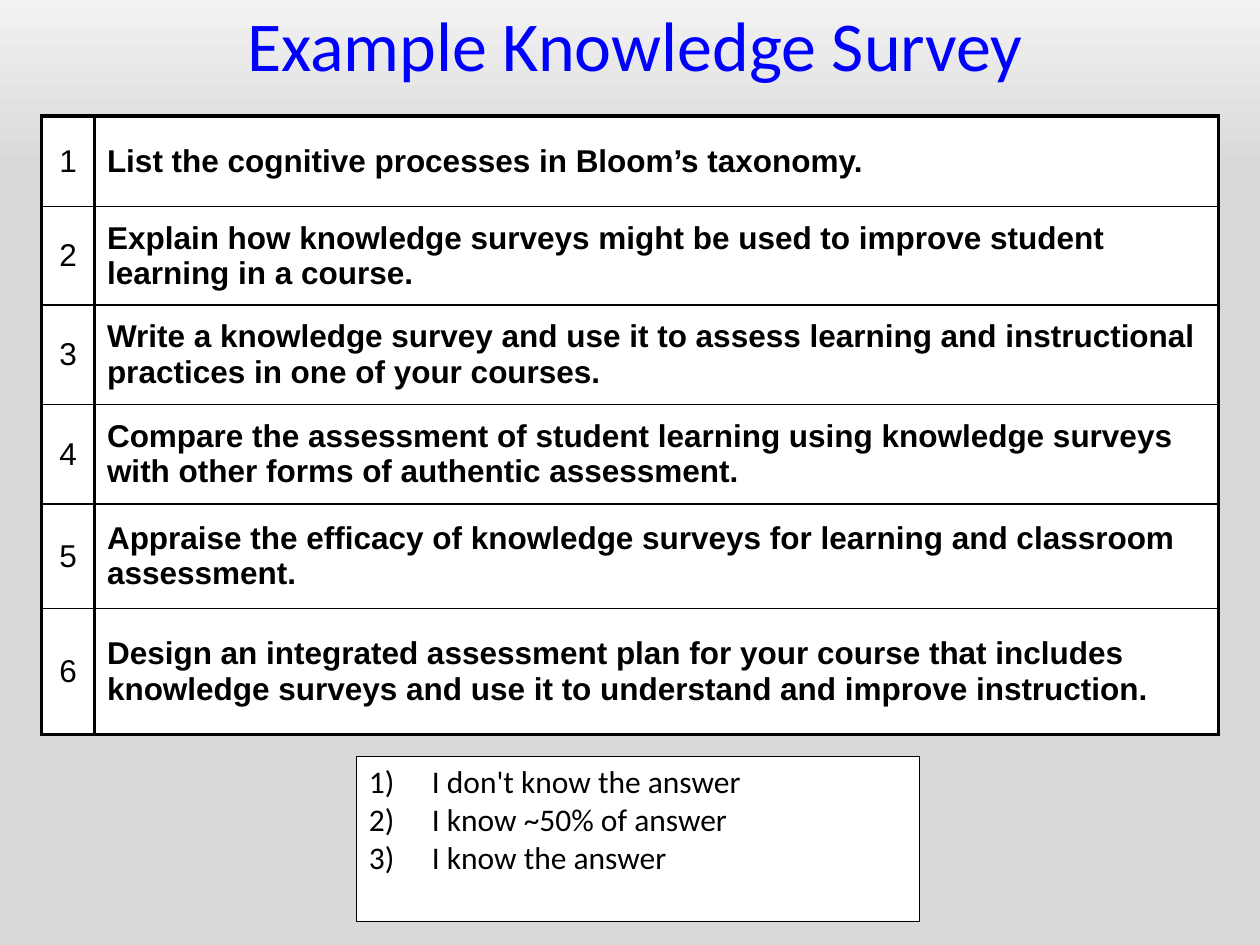
"""Build a one-slide example of a knowledge survey with its answer scale."""
from dataclasses import dataclass

from lxml.etree import SubElement
from pptx import Presentation
from pptx.dml.color import RGBColor
from pptx.enum.shapes import MSO_AUTO_SHAPE_TYPE as ShapeType
from pptx.enum.text import MSO_ANCHOR as Anchor, MSO_AUTO_SIZE as AutoSize, PP_ALIGN as Align
from pptx.oxml.ns import qn
from pptx.slide import Slide
from pptx.table import _Cell as Cell
from pptx.util import Inches, Pt


@dataclass(frozen=True)
class Theme:
    """Colours, fonts, type sizes and line widths."""
    title_color: str = "0000FF"
    ink: str = "000000"
    paper: str = "FFFFFF"
    background_top: str = "F2F2F2"
    background: str = "D9D9D9"
    heading_font: str = "Calibri"
    table_font: str = "Arial"
    title_size: float = 40
    body_size: float = 18
    thick: float = 2.25
    thin: float = 1
    hairline: float = 0.5


@dataclass(frozen=True)
class Question:
    """One survey row: its wording and row height in inches."""
    text: str
    height: float


THEME = Theme()
COLUMN_WIDTHS = (0.42, 8.92)
QUESTIONS = (
    Question("List the cognitive processes in Bloom’s taxonomy.", 0.72),
    Question("Explain how knowledge surveys might be used to improve student learning in a course.", 0.78),
    Question("Write a knowledge survey and use it to assess learning and instructional "
             "practices in one of your courses.", 0.79),
    Question("Compare the assessment of student learning using knowledge surveys "
             "with other forms of authentic assessment.", 0.79),
    Question("Appraise the efficacy of knowledge surveys for learning and classroom assessment.", 0.83),
    Question("Design an integrated assessment plan for your course that includes "
             "knowledge surveys and use it to understand and improve instruction.", 1),
)
ANSWERS = ("I don't know the answer", "I know ~50% of answer", "I know the answer")


def write_text(paragraph, text: str, *, font: str, color: str = THEME.ink,
               size: float = THEME.body_size, bold: bool = False,
               align: Align = Align.LEFT) -> None:
    """Put formatted text in a paragraph."""
    run = paragraph.add_run()
    run.text = text
    paragraph.alignment = align
    run.font.name = font
    run.font.size = Pt(size)
    run.font.bold = bold
    run.font.color.rgb = RGBColor.from_string(color)


def number_paragraph(paragraph) -> None:
    """Number a paragraph as 1), 2), 3) with a hanging indent."""
    properties = paragraph._p.get_or_add_pPr()
    properties.set("marL", str(Inches(0.5)))
    properties.set("indent", str(-Inches(0.5)))
    SubElement(properties, qn("a:buFont"), typeface="+mj-lt")
    SubElement(properties, qn("a:buAutoNum"), type="arabicParenR")


def style_cell(cell: Cell, top: float, bottom: float) -> None:
    """Give a cell its borders, fill and middle anchor."""
    properties = cell._tc.get_or_add_tcPr()
    widths = {"a:lnL": THEME.thick, "a:lnR": THEME.thick, "a:lnT": top, "a:lnB": bottom}
    for tag, width in widths.items():
        line = SubElement(properties, qn(tag), w=str(Pt(width)))
        SubElement(SubElement(line, qn("a:solidFill")), qn("a:srgbClr"), val=THEME.ink)
    cell.fill.solid()
    cell.fill.fore_color.rgb = RGBColor.from_string(THEME.paper)
    cell.vertical_anchor = Anchor.MIDDLE


def paint_background(slide: Slide) -> None:
    """Fade the background from light at the top to grey."""
    fill = slide.background.fill
    fill.gradient()
    fill.gradient_angle = 270
    stops = ((0, THEME.background_top), (0.18, THEME.background))
    for stop, (position, color) in zip(fill.gradient_stops, stops):
        stop.position = position
        stop.color.rgb = RGBColor.from_string(color)


def add_title(slide: Slide, text: str) -> None:
    """Place and format the title."""
    title = slide.shapes.title
    title.left, title.top = Inches(0.33), Inches(-0.04)
    title.width, title.height = Inches(9.42), Inches(0.77)
    frame = title.text_frame
    frame.auto_size = AutoSize.NONE
    frame.vertical_anchor = Anchor.TOP
    write_text(frame.paragraphs[0], text, font=THEME.heading_font, color=THEME.title_color,
               size=THEME.title_size, align=Align.CENTER)


def add_survey(slide: Slide, questions: tuple[Question, ...]) -> None:
    """Draw the numbered survey table."""
    height = sum(question.height for question in questions)
    table = slide.shapes.add_table(len(questions), len(COLUMN_WIDTHS), Inches(0.33), Inches(0.92),
                                   Inches(sum(COLUMN_WIDTHS)), Inches(height)).table
    table.first_row = table.horz_banding = False
    for column, width in zip(table.columns, COLUMN_WIDTHS):
        column.width = Inches(width)
    for index, question in enumerate(questions):
        table.rows[index].height = Inches(question.height)
        top = THEME.thick if index == 0 else THEME.thin
        bottom = THEME.thick if index == len(questions) - 1 else THEME.thin
        number, wording = table.rows[index].cells
        for cell in (number, wording):
            style_cell(cell, top, bottom)
        write_text(number.text_frame.paragraphs[0], str(index + 1),
                   font=THEME.table_font, align=Align.CENTER)
        write_text(wording.text_frame.paragraphs[0], question.text,
                   font=THEME.table_font, bold=True)


def add_answers(slide: Slide, answers: tuple[str, ...]) -> None:
    """Draw the box with the numbered answer scale."""
    box = slide.shapes.add_shape(ShapeType.RECTANGLE, Inches(2.83), Inches(6),
                                 Inches(4.47), Inches(1.31))
    box.shadow.inherit = False
    box.fill.solid()
    box.fill.fore_color.rgb = RGBColor.from_string(THEME.paper)
    box.line.color.rgb = RGBColor.from_string(THEME.ink)
    box.line.width = Pt(THEME.hairline)
    frame = box.text_frame
    frame.word_wrap = True
    frame.vertical_anchor = Anchor.TOP
    for index, answer in enumerate(answers):
        paragraph = frame.add_paragraph() if index else frame.paragraphs[0]
        number_paragraph(paragraph)
        write_text(paragraph, answer, font=THEME.heading_font)


def main() -> None:
    """Build and save the presentation."""
    presentation = Presentation()
    presentation.slide_width, presentation.slide_height = Inches(10), Inches(7.5)
    slide = presentation.slides.add_slide(presentation.slide_layouts[5])
    paint_background(slide)
    add_title(slide, "Example Knowledge Survey")
    add_survey(slide, QUESTIONS)
    add_answers(slide, ANSWERS)
    presentation.save("out.pptx")


if __name__ == "__main__":
    main()
